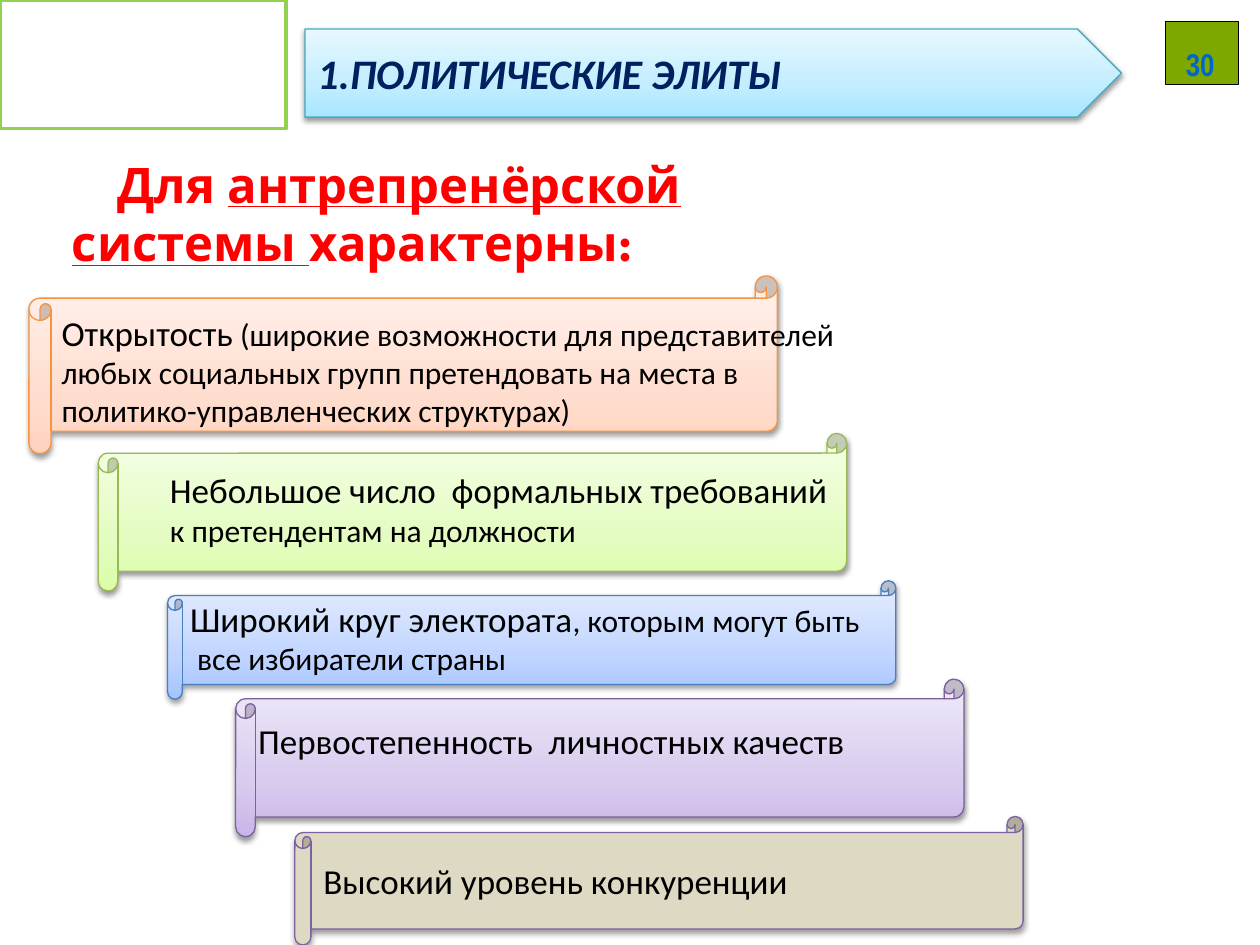
from lxml import etree
from copy import deepcopy
from pptx import Presentation
from pptx.dml.color import RGBColor
from pptx.enum.shapes import MSO_SHAPE
from pptx.enum.text import MSO_ANCHOR, MSO_AUTO_SIZE, PP_ALIGN
from pptx.oxml.ns import qn
from pptx.util import Inches, Pt

RECT = MSO_SHAPE.RECTANGLE
BANNER = MSO_SHAPE.PENTAGON
SCROLL = MSO_SHAPE.HORIZONTAL_SCROLL
TOP, MIDDLE = MSO_ANCHOR.TOP, MSO_ANCHOR.MIDDLE
LEFT, CENTER = PP_ALIGN.LEFT, PP_ALIGN.CENTER
GROW = MSO_AUTO_SIZE.SHAPE_TO_FIT_TEXT
TITLE_ONLY = 5

# Scrolls from back to front: place, gradient from bottom to top, line
SCROLLS = [
    ((1.87, 5.39, 5.78, 1.25), ("C9B5E8", "D8CBEE", "F0EAF9"), "7D60A0"),
    ((1.33, 4.61, 5.78, 0.94), ("A4C4FF", "BFD4FF", "E6EEFF"), "4B7EBC"),
    ((0.78, 3.44, 5.94, 1.25), ("DAFDA7", "E4FCC2", "F5FFE7"), "98B955"),
    ((0.23, 2.19, 5.94, 1.41), ("FFD2BD", "FFDED0", "FFF2ED"), "F69240"),
]

# Features of the system: place, paragraphs of (text, size) runs
FEATURES = [
    ((0.39, 2.42, 6.48, 1.04), [[
        ("Открытость", 20),
        (" (широкие возможности для представителей любых социальных групп "
         "претендовать на места в политико-управленческих структурах)", 18)]]),
    ((1.25, 3.67, 5.55, 0.74), [[
        ("Небольшое число  формальных требований ", 20),
        ("к претендентам на должности", 18)]]),
    ((1.41, 4.69, 6.41, 0.74), [
        [("Широкий круг электората", 20), (", которым могут быть", 18)],
        [(" все избиратели страны", 18)]]),
    ((1.95, 5.66, 5.78, 0.74), [[("Первостепенность  личностных качеств", 20)]]),
]


def rgb(value):
    return RGBColor.from_string(value)


def add_run(paragraph, text, size=20, font="Calibri", color="000000",
            bold=False, italic=False, underline=False):
    run = paragraph.add_run()
    run.text = text
    run.font.size = Pt(size)
    run.font.name = font
    run.font.color.rgb = rgb(color)
    run.font.bold = bold
    run.font.italic = italic
    run.font.underline = underline
    return run


def set_frame(frame, anchor=TOP, wrap=True, align=LEFT):
    frame.word_wrap = wrap
    frame.vertical_anchor = anchor
    frame.paragraphs[0].alignment = align
    return frame.paragraphs[0]


def fill_gradient(shape, colors):
    shape.fill.gradient()
    shape.fill.gradient_angle = 90
    stop_list = shape._element.spPr.find(qn("a:gradFill")).find(qn("a:gsLst"))
    stop_list.insert(1, deepcopy(stop_list[0]))
    for stop, color, position in zip(shape.fill.gradient_stops, colors, (0, 0.35, 1)):
        stop.color.rgb = rgb(color)
        stop.position = position


def add_shadow(shape):
    effects = shape._element.spPr.find(qn("a:effectLst"))
    shadow = etree.SubElement(effects, qn("a:outerShdw"), blurRad=str(Pt(3.1)),
                              dist=str(Pt(1.6)), dir="5400000", rotWithShape="0")
    black = etree.SubElement(shadow, qn("a:srgbClr"), val="000000")
    etree.SubElement(black, qn("a:alpha"), val="38000")


def add_panel(slide, kind, place, line, fill=None, gradient=None,
              width=0.75, shadow=False):
    panel = slide.shapes.add_shape(kind, *map(Inches, place))
    panel.shadow.inherit = False
    if gradient:
        fill_gradient(panel, gradient)
    elif fill:
        panel.fill.solid()
        panel.fill.fore_color.rgb = rgb(fill)
    else:
        panel.fill.background()
    panel.line.color.rgb = rgb(line)
    panel.line.width = Pt(width)
    if shadow:
        add_shadow(panel)
    return panel


def add_feature(slide, place, paragraphs):
    frame = slide.shapes.add_textbox(*map(Inches, place)).text_frame
    paragraph = set_frame(frame)
    frame.auto_size = GROW
    for index, runs in enumerate(paragraphs):
        if index:
            paragraph = frame.add_paragraph()
        for text, size in runs:
            add_run(paragraph, text, size=size)


def format_title(title):
    title.left, title.top, title.width, title.height = map(
        Inches, (0.47, 1.17, 5.63, 1.04))
    paragraph = set_frame(title.text_frame, anchor=MIDDLE)
    title.text_frame.auto_size = GROW
    paragraph._p.get_or_add_pPr().set("indent", str(Inches(0.36)))
    for text, underline in [("Для ", False), ("антрепренёрской", True), (" ", False),
                            ("системы ", True), ("характерны:", False)]:
        add_run(paragraph, text, size=28, font="League Spartan", color="FF0000",
                bold=True, underline=underline)


def add_page_number(slide):
    add_panel(slide, RECT, (9.25, 0.17, 0.58, 0.5), "000000", fill="7CA800")
    place = map(Inches, (9.38, 0.31, 0.29, 0.23))
    frame = slide.shapes.add_textbox(*place).text_frame
    # The narrow box needs its full width to keep both digits on one line
    frame.margin_left = frame.margin_right = Inches(0)
    number = add_run(set_frame(frame, wrap=False, align=CENTER), "30", size=18,
                     font="Arial Narrow", color="0066CC", bold=True)
    # Light outline around the digits
    outline = etree.Element(qn("a:ln"), w=str(Pt(1.5)))
    solid = etree.SubElement(outline, qn("a:solidFill"))
    etree.SubElement(solid, qn("a:srgbClr"), val="99CCFF")
    number.font._element.insert(0, outline)


def main():
    prs = Presentation()
    prs.slide_width, prs.slide_height = Inches(10), Inches(7.5)
    slide = prs.slides.add_slide(prs.slide_layouts[TITLE_ONLY])
    format_title(slide.shapes.title)

    # Scrolls and the features written over them
    for place, gradient, line in SCROLLS:
        add_panel(slide, SCROLL, place, line, gradient=gradient, shadow=True)
    for place, paragraphs in FEATURES:
        add_feature(slide, place, paragraphs)

    # Header: empty frame, page number, section banner
    add_panel(slide, RECT, (0, 0, 2.27, 1.02), "92D050", width=2)
    add_page_number(slide)
    section = add_panel(slide, BANNER, (2.42, 0.23, 6.48, 0.7), "46AAC5",
                        gradient=("A7E6FF", "C1EDFF", "E7F8FF"), shadow=True)
    add_run(set_frame(section.text_frame, anchor=MIDDLE), "1.ПОЛИТИЧЕСКИЕ ЭЛИТЫ",
            size=24, color="002060", bold=True, italic=True)

    # Last feature, written inside its scroll
    competition = add_panel(slide, SCROLL, (2.34, 6.48, 5.78, 1.02), "7D60A0",
                            fill="DDD9C3", shadow=True)
    add_run(set_frame(competition.text_frame, anchor=MIDDLE),
            "Высокий уровень конкуренции")

    prs.save("out.pptx")


if __name__ == "__main__":
    main()
